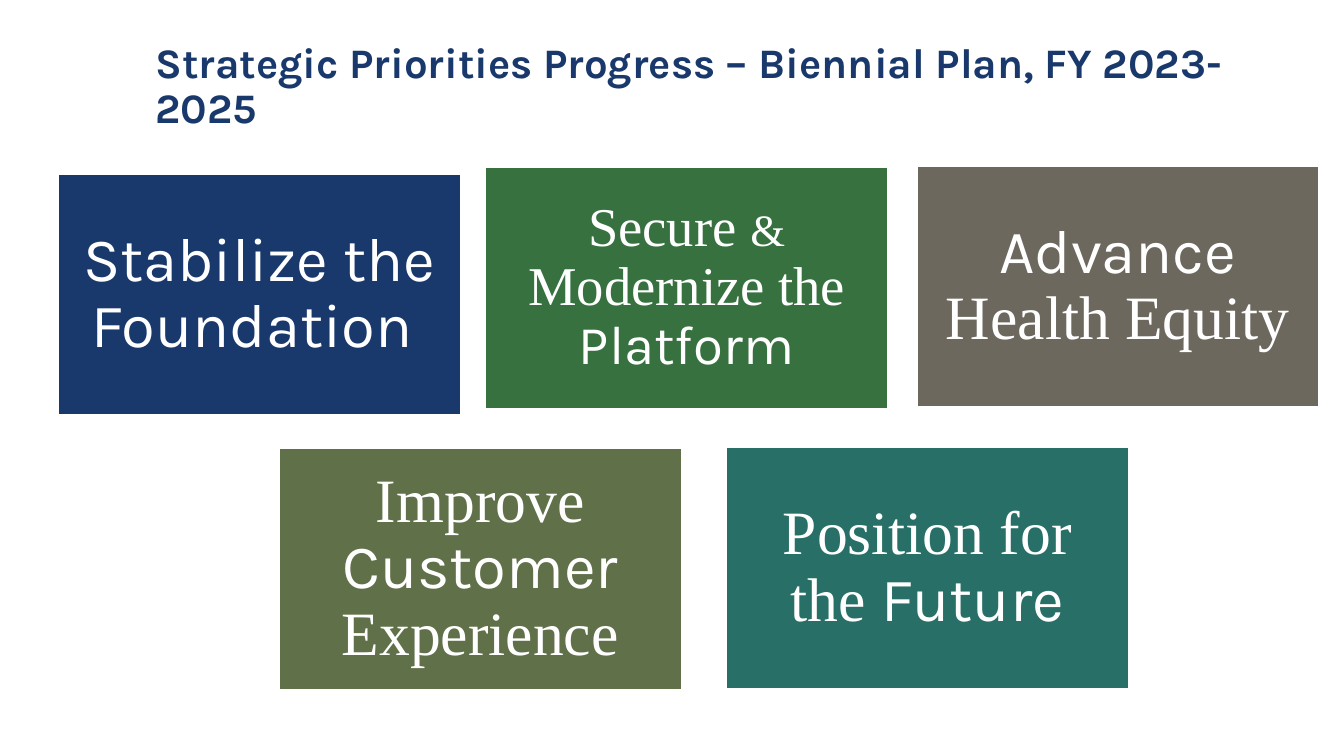
from dataclasses import dataclass

from pptx import Presentation
from pptx.dml.color import RGBColor
from pptx.enum.shapes import MSO_SHAPE
from pptx.enum.text import MSO_ANCHOR, MSO_AUTO_SIZE, PP_ALIGN
from pptx.util import Cm, Pt


@dataclass(frozen=True)
class Theme:
    navy: str = "19386B"
    green: str = "37713F"
    taupe: str = "6D685E"
    olive: str = "607049"
    teal: str = "276F67"
    white: str = "FFFFFF"
    sans: str = "Karla"
    serif: str = "Times New Roman"
    title_size: int = 30
    card_size: int = 44
    long_card_size: int = 39
    ampersand_size: int = 32
    line_spacing: float = 0.9


theme = Theme()


def format_run(run, font, size, color):
    run.font.name = font
    run.font.size = Pt(size)
    run.font.color.rgb = RGBColor.from_string(color)


presentation = Presentation()
presentation.slide_width, presentation.slide_height = Cm(33.87), Cm(19.05)
slide = presentation.slides.add_slide(presentation.slide_layouts[5])

title = slide.shapes.title
title.left, title.top, title.width, title.height = Cm(3.66), Cm(1.12), Cm(29.21), Cm(2.18)
title.text_frame.text = "Strategic Priorities Progress – Biennial Plan, FY 2023-2025"
title.text_frame.word_wrap = True
title.text_frame.auto_size = MSO_AUTO_SIZE.NONE
title.text_frame.vertical_anchor = MSO_ANCHOR.MIDDLE
heading = title.text_frame.paragraphs[0]
heading.alignment = PP_ALIGN.LEFT
heading.line_spacing = theme.line_spacing
format_run(heading.runs[0], theme.sans, theme.title_size, theme.navy)
heading.runs[0].font.bold = True

# Left, top and inset in cm, fill, then the wording as (text, font, size)
priorities = [
    (1.47, 4.39, 0.46, theme.navy, [
        ("Stabilize the Foundation ", theme.sans, theme.card_size)]),
    (12.24, 4.22, 0.41, theme.green, [
        ("Secure ", theme.serif, theme.long_card_size),
        ("& ", theme.serif, theme.ampersand_size),
        ("Modernize the ", theme.serif, theme.long_card_size),
        ("Platform", theme.sans, theme.long_card_size)]),
    (23.11, 4.19, 0.46, theme.taupe, [
        ("Advance", theme.sans, theme.card_size),
        (" Health Equity", theme.serif, theme.card_size)]),
    (7.04, 11.3, 0.46, theme.olive, [
        ("Improve ", theme.serif, theme.card_size),
        ("Customer", theme.sans, theme.card_size),
        (" Experience", theme.serif, theme.card_size)]),
    (18.31, 11.28, 0.46, theme.teal, [
        ("Position for the ", theme.serif, theme.card_size),
        ("Future", theme.sans, theme.card_size)]),
]

for left, top, inset, fill, wording in priorities:
    card = slide.shapes.add_shape(
        MSO_SHAPE.RECTANGLE, Cm(left), Cm(top), Cm(10.13), Cm(6.07))
    card.shadow.inherit = False
    card.fill.solid()
    card.fill.fore_color.rgb = RGBColor.from_string(fill)
    card.line.color.rgb = RGBColor.from_string(theme.white)
    card.line.width = Pt(1)

    frame = card.text_frame
    frame.word_wrap = True
    frame.vertical_anchor = MSO_ANCHOR.MIDDLE
    frame.margin_left = frame.margin_right = Cm(inset)
    frame.margin_top = frame.margin_bottom = Cm(inset)
    priority = frame.paragraphs[0]
    priority.alignment = PP_ALIGN.CENTER
    priority.line_spacing = theme.line_spacing
    for text, font, size in wording:
        run = priority.add_run()
        run.text = text
        format_run(run, font, size, theme.white)

presentation.save("out.pptx")
